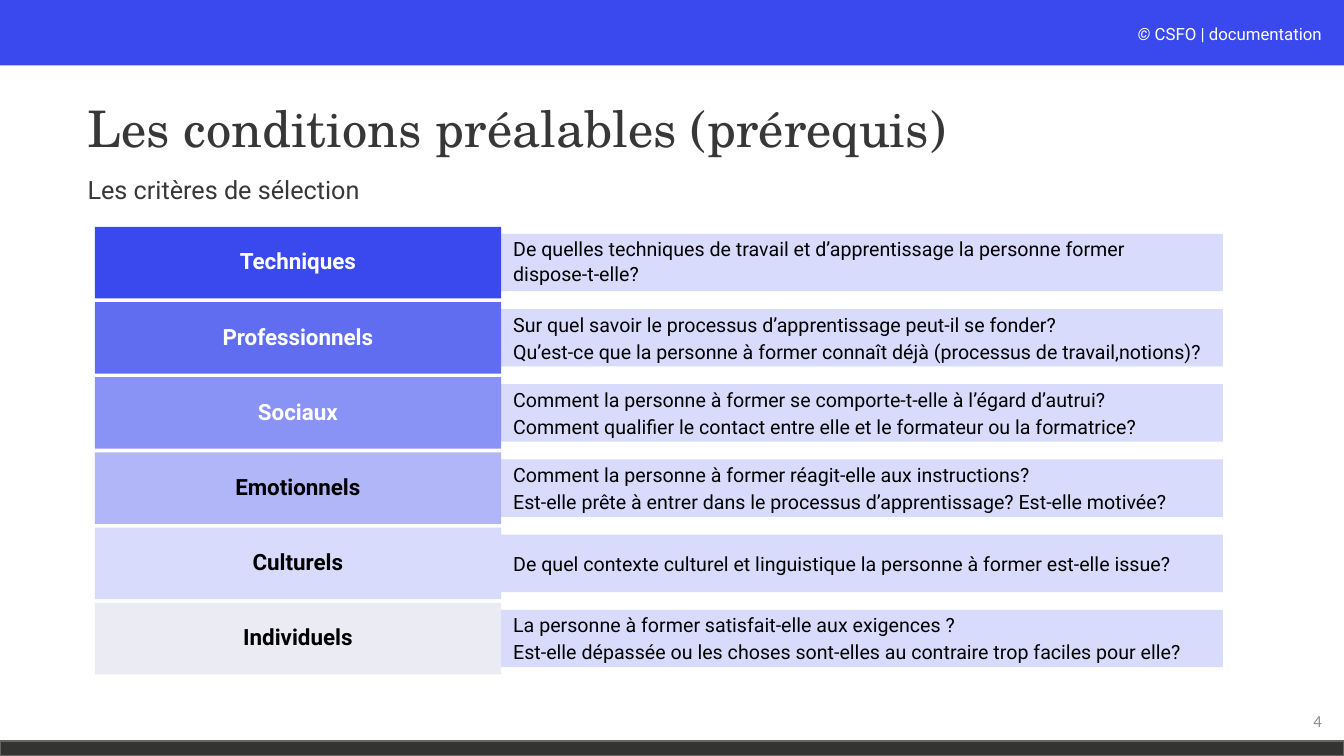
from pptx import Presentation
from pptx.util import Inches, Pt
from pptx.dml.color import RGBColor
from pptx.enum.shapes import MSO_SHAPE
from pptx.enum.text import MSO_ANCHOR, PP_ALIGN

BLUE = RGBColor(0x3A, 0x49, 0xEE)
PALE = RGBColor(0xD8, 0xDB, 0xFC)
DARK = RGBColor(0x33, 0x33, 0x33)
EDGE = RGBColor(0x66, 0x63, 0x60)
INK = RGBColor(0x37, 0x37, 0x37)
GREY = RGBColor(0x8C, 0x8C, 0x8C)
WHITE = RGBColor(0xFF, 0xFF, 0xFF)
BLACK = RGBColor(0, 0, 0)

# Content
TITLE = "Les conditions préalables (prérequis)"
SUB = "Les critères de sélection"
OWNER = "© CSFO | documentation"
PAGE = "4"
# label, fill, label colour, line spacing of the questions, questions
ROWS = [
    ("Techniques", BLUE, WHITE, 0.9,
     ["De quelles techniques de travail et d’apprentissage la personne former",
      "dispose-t-elle?"]),
    ("Professionnels", RGBColor(0x61, 0x6D, 0xF1), WHITE, 1.0,
     ["Sur quel savoir le processus d’apprentissage peut-il se fonder?",
      "Qu’est-ce que la personne à former connaît déjà (processus de travail,notions)?"]),
    ("Sociaux", RGBColor(0x89, 0x92, 0xF5), WHITE, 1.0,
     ["Comment la personne à former se comporte-t-elle à l’égard d’autrui?",
      "Comment qualifier le contact entre elle et le formateur ou la formatrice?"]),
    ("Emotionnels", RGBColor(0xB0, 0xB6, 0xF8), BLACK, 1.0,
     ["Comment la personne à former réagit-elle aux instructions?",
      "Est-elle prête à entrer dans le processus d’apprentissage? Est-elle motivée?"]),
    ("Culturels", RGBColor(0xD9, 0xDB, 0xFC), BLACK, 1.0,
     ["De quel contexte culturel et linguistique la personne à former est-elle issue?"]),
    ("Individuels", RGBColor(0xEB, 0xEC, 0xF3), BLACK, 1.0,
     ["La personne à former satisfait-elle aux exigences ?",
      "Est-elle dépassée ou les choses sont-elles au contraire trop faciles pour elle?"]),
]

# Grid
WIDE, HIGH = 13.33, 7.5
LEFT, TOP, PITCH = 0.94, 2.25, 0.746
LABEL_W, LABEL_H = 4.03, 0.71
BAR_W, BAR_H = 7.16, 0.57
HEAD, FOOT = 0.65, 0.15

deck = Presentation()
deck.slide_width, deck.slide_height = Inches(WIDE), Inches(HIGH)
slide = deck.slides.add_slide(deck.slide_layouts[6])


def add_rect(x, y, w, h, fill):
    rect = slide.shapes.add_shape(
        MSO_SHAPE.RECTANGLE, Inches(x), Inches(y), Inches(w), Inches(h))
    rect.shadow.inherit = False
    rect.fill.solid()
    rect.fill.fore_color.rgb = fill
    rect.line.fill.background()
    return rect


def add_box(x, y, w, h):
    return slide.shapes.add_textbox(Inches(x), Inches(y), Inches(w), Inches(h))


def write(shape, lines, size, color, face="Roboto", bold=False,
          align=PP_ALIGN.LEFT, anchor=MSO_ANCHOR.MIDDLE, pitch=1.0,
          after=0, inset=(0.1, 0.05)):
    frame = shape.text_frame
    frame.word_wrap = True
    frame.vertical_anchor = anchor
    frame.margin_left = frame.margin_right = Inches(inset[0])
    frame.margin_top = frame.margin_bottom = Inches(inset[1])
    frame.text = "\n".join(lines)
    for para in frame.paragraphs:
        para.alignment = align
        para.line_spacing = pitch
        para.space_after = Pt(after)
        for run in para.runs:
            run.font.name = face
            run.font.size = Pt(size)
            run.font.bold = bold
            run.font.color.rgb = color


# Header and footer bands
add_rect(0, 0, WIDE, HEAD, BLUE)
foot = add_rect(0, HIGH - FOOT, WIDE, FOOT, DARK)
foot.line.color.rgb = EDGE
foot.line.width = Pt(1)
owner = add_box(8.62, 0.19, 4.59, 0.3)
write(owner, [OWNER], 12, WHITE, align=PP_ALIGN.RIGHT, anchor=MSO_ANCHOR.TOP)
sign, rest = OWNER.split(" ", 1)
first = owner.text_frame.paragraphs[0].runs[0]
first.text = sign + " "
first.font.italic = True
tail = owner.text_frame.paragraphs[0].add_run()
tail.text = rest
tail.font.name, tail.font.size = "Roboto", Pt(12)
tail.font.color.rgb = WHITE

# Title, subtitle and page number
write(add_box(0.77, 0.58, 8.82, 1.45), [TITLE], 36, INK,
      face="TeX Gyre Schola", pitch=0.9)
write(add_box(0.77, 1.71, 8.81, 0.54), [SUB], 18, INK,
      anchor=MSO_ANCHOR.TOP, pitch=0.9)
write(add_box(10.21, 6.95, 3, 0.4), [PAGE], 12, GREY,
      face="Calibri", align=PP_ALIGN.RIGHT)

# Criteria: label on the left, questions on the right
for i, (label, fill, color, pitch, asks) in enumerate(ROWS):
    y = TOP + i * PITCH
    bar = add_rect(LEFT + LABEL_W, y + (LABEL_H - BAR_H) / 2, BAR_W, BAR_H, PALE)
    write(bar, asks, 14, BLACK, pitch=pitch, after=2.4, inset=(0.12, 0))
    tile = add_rect(LEFT, y, LABEL_W, LABEL_H, fill)
    write(tile, [label], 16, color, bold=True, align=PP_ALIGN.CENTER,
          pitch=0.9, inset=(0.07, 0.03))

deck.save("out.pptx")
